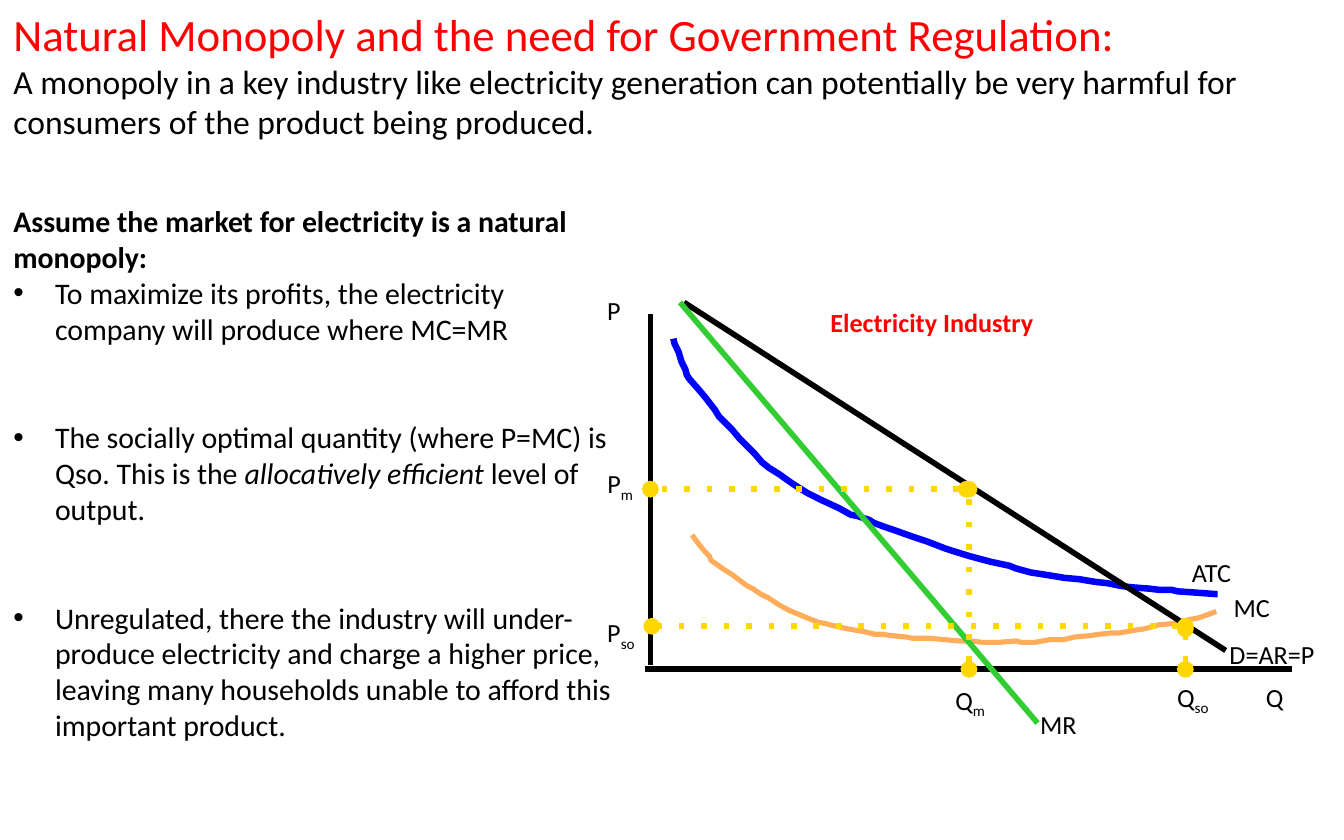
from dataclasses import dataclass

from lxml.etree import SubElement
from pptx import Presentation
from pptx.dml.color import RGBColor
from pptx.enum.shapes import MSO_CONNECTOR
from pptx.enum.text import MSO_ANCHOR, MSO_AUTO_SIZE, PP_ALIGN
from pptx.oxml.ns import qn
from pptx.util import Pt

EMU_PER_PX = 9144  # 100 px to the inch


@dataclass(frozen=True)
class Theme:
    font: str = "Calibri"
    ink: str = "000000"
    accent: str = "FF0000"
    average_cost: str = "0000FF"
    marginal_cost: str = "FFAD5B"
    marginal_revenue: str = "32CD32"
    guide: str = "FFD700"
    title_size: int = 24
    intro_size: int = 18
    body_size: int = 16
    label_size: int = 14
    line_width: float = 3


THEME = Theme()


@dataclass(frozen=True)
class Span:
    text: str
    bold: bool = False
    italic: bool = False
    subscript: bool = False


@dataclass(frozen=True)
class Label:
    left: int
    top: int
    width: int
    text: str
    subscript: str = ""
    bold: bool = False
    color: str = THEME.ink


@dataclass(frozen=True)
class Line:
    start: tuple[int, int]
    end: tuple[int, int]
    color: str = THEME.ink
    dotted: bool = False


@dataclass(frozen=True)
class Curve:
    points: list[tuple[int, int]]
    color: str
    width: float


INTRO = ("A monopoly in a key industry like electricity generation can potentially "
         "be very harmful for consumers of the product being produced.")
ASSUMPTION = Span("Assume the market for electricity is a natural monopoly:", bold=True)
ARGUMENTS = [
    [Span("To maximize its profits, the electricity company will produce where MC=MR")],
    [Span("The socially optimal quantity (where P=MC) is Qso. This is the "),
     Span("allocatively efficient ", italic=True), Span("level of output.")],
    [Span("Unregulated, there the industry will under-produce electricity and charge "
          "a higher price, leaving many households unable to afford this important product.")],
]

AXES = [Line((484, 234), (484, 495)), Line((480, 498), (961, 498))]
DEMAND = Line((509, 225), (912, 484))
MARGINAL_REVENUE = Line((506, 225), (772, 538), THEME.marginal_revenue)
GUIDES = [
    Line(start, end, THEME.guide, dotted=True)
    for start, end in [
        ((721, 498), (721, 364)), ((719, 364), (484, 364)),
        ((882, 498), (882, 468)), ((882, 466), (485, 466)),
    ]
]

AVERAGE_COST = Curve([
    (501, 252), (502, 256), (505, 262), (507, 269), (510, 275), (511, 279), (513, 282),
    (520, 290), (525, 296), (532, 305), (535, 310), (539, 314), (545, 320), (550, 326),
    (556, 332), (561, 337), (567, 344), (572, 348), (580, 353), (587, 358), (593, 362),
    (601, 367), (607, 370), (611, 372), (624, 378), (633, 383), (638, 384), (647, 387),
    (650, 389), (658, 392), (664, 394), (678, 399), (690, 403), (703, 408), (709, 410),
    (722, 414), (737, 418), (751, 421), (756, 423), (767, 426), (780, 428), (792, 430),
    (803, 431), (815, 433), (824, 434), (834, 436), (842, 437), (855, 438), (863, 439),
    (872, 439), (876, 440), (890, 441), (904, 442), (906, 442),
], THEME.average_cost, 3.48)
MARGINAL_COST = Curve([
    (515, 398), (517, 401), (520, 405), (525, 411), (528, 414), (529, 417), (532, 419),
    (539, 424), (544, 427), (552, 433), (556, 436), (560, 438), (566, 442), (572, 445),
    (578, 449), (583, 452), (589, 455), (594, 457), (601, 460), (609, 463), (614, 464),
    (622, 466), (631, 468), (643, 470), (651, 472), (656, 472), (664, 473), (674, 474),
    (679, 475), (692, 475), (703, 476), (714, 477), (723, 477), (731, 478), (743, 478),
    (756, 477), (760, 478), (770, 478), (781, 476), (791, 476), (800, 474), (811, 473),
    (818, 472), (827, 471), (833, 471), (844, 469), (851, 468), (859, 466), (862, 465),
    (873, 464), (885, 461), (891, 460), (897, 458), (905, 455),
], THEME.marginal_cost, 2.75)

LABELS = [
    Label(932, 502, 40, "Q"),
    Label(442, 214, 26, "P"),
    Label(608, 223, 275, "Electricity Industry", bold=True, color=THEME.accent),
    Label(701, 504, 70, "Q", "m"),
    Label(866, 502, 75, "Q", "so"),
    Label(442, 343, 65, "P", "m"),
    Label(442, 454, 67, "P", "so"),
    Label(905, 470, 113, "D=AR=P"),
    Label(764, 522, 72, "MR"),
    Label(877, 409, 70, "ATC"),
    Label(908, 435, 60, "MC"),
]
LABEL_HEIGHT = 34
BULLET_INDENT = 31
ARGUMENT_GAP = 39  # points, two lines of body text


def px(length: int) -> int:
    return length * EMU_PER_PX


def write(paragraph, spans: list[Span], size: int, color: str = THEME.ink) -> None:
    paragraph.alignment = PP_ALIGN.LEFT
    paragraph.space_before = Pt(0)
    for span in spans:
        run = paragraph.add_run()
        run.text = span.text
        font = run.font
        font.name, font.size = THEME.font, Pt(size)
        font.bold, font.italic = span.bold, span.italic
        font.color.rgb = RGBColor.from_string(color)
        if span.subscript:
            run._r.get_or_add_rPr().set("baseline", "-25000")


def prepare(shape, left: int, top: int, width: int, height: int):
    """Place a text shape and return its frame, wrapped and set from the top."""
    shape.left, shape.top, shape.width, shape.height = map(px, (left, top, width, height))
    frame = shape.text_frame
    frame.word_wrap = True
    frame.auto_size = MSO_AUTO_SIZE.NONE
    frame.vertical_anchor = MSO_ANCHOR.TOP
    frame.margin_left = frame.margin_right = px(10)
    frame.margin_top = frame.margin_bottom = px(5)
    return frame


def fill_title(title) -> None:
    frame = prepare(title, 0, 0, 1000, 111)
    heading = Span("Natural Monopoly and the need for Government Regulation:")
    write(frame.paragraphs[0], [heading], THEME.title_size, THEME.accent)
    write(frame.add_paragraph(), [Span(INTRO)], THEME.intro_size)


def fill_body(body) -> None:
    frame = prepare(body, 0, 146, 465, 414)
    opening = frame.paragraphs[0]
    write(opening, [ASSUMPTION], THEME.body_size)
    properties = opening._p.get_or_add_pPr()
    properties.set("marL", "0")
    properties.set("indent", "0")
    SubElement(properties, qn("a:buNone"))
    for index, argument in enumerate(ARGUMENTS):
        paragraph = frame.add_paragraph()
        write(paragraph, argument, THEME.body_size)
        paragraph.space_before = Pt(ARGUMENT_GAP if index else 0)
        properties = paragraph._p.get_or_add_pPr()
        properties.set("marL", str(px(BULLET_INDENT)))
        properties.set("indent", str(-px(BULLET_INDENT)))


def draw_line(shapes, line: Line) -> None:
    connector = shapes.add_connector(
        MSO_CONNECTOR.STRAIGHT, *map(px, (*line.start, *line.end)))
    connector.line.color.rgb = RGBColor.from_string(line.color)
    connector.line.width = Pt(THEME.line_width)
    SubElement(connector._element.spPr, qn("a:effectLst"))
    if line.dotted:
        outline = connector.line._get_or_add_ln()
        SubElement(outline, qn("a:prstDash"), val="dot")
        for end in ("a:headEnd", "a:tailEnd"):
            SubElement(outline, qn(end), type="oval")


def draw_curve(shapes, curve: Curve) -> None:
    builder = shapes.build_freeform(*curve.points[0], scale=EMU_PER_PX)
    builder.add_line_segments(curve.points[1:], close=False)
    trace = builder.convert_to_shape()
    trace.fill.background()
    trace.line.color.rgb = RGBColor.from_string(curve.color)
    trace.line.width = Pt(curve.width)
    trace.shadow.inherit = False


def draw_label(shapes, label: Label) -> None:
    frame = prepare(shapes.add_textbox(0, 0, 0, 0),
                    label.left, label.top, label.width, LABEL_HEIGHT)
    spans = [Span(label.text, bold=label.bold)]
    if label.subscript:
        spans.append(Span(label.subscript, subscript=True))
    write(frame.paragraphs[0], spans, THEME.label_size, label.color)


def main() -> None:
    deck = Presentation()
    deck.slide_width, deck.slide_height = px(1000), px(625)
    slide = deck.slides.add_slide(deck.slide_layouts[1])
    shapes = slide.shapes
    fill_title(shapes.title)
    fill_body(slide.placeholders[1])
    for axis in AXES:
        draw_line(shapes, axis)
    for curve in (AVERAGE_COST, MARGINAL_COST):
        draw_curve(shapes, curve)
    for line in (DEMAND, MARGINAL_REVENUE, *GUIDES):
        draw_line(shapes, line)
    for label in LABELS:
        draw_label(shapes, label)
    deck.save("out.pptx")


if __name__ == "__main__":
    main()
